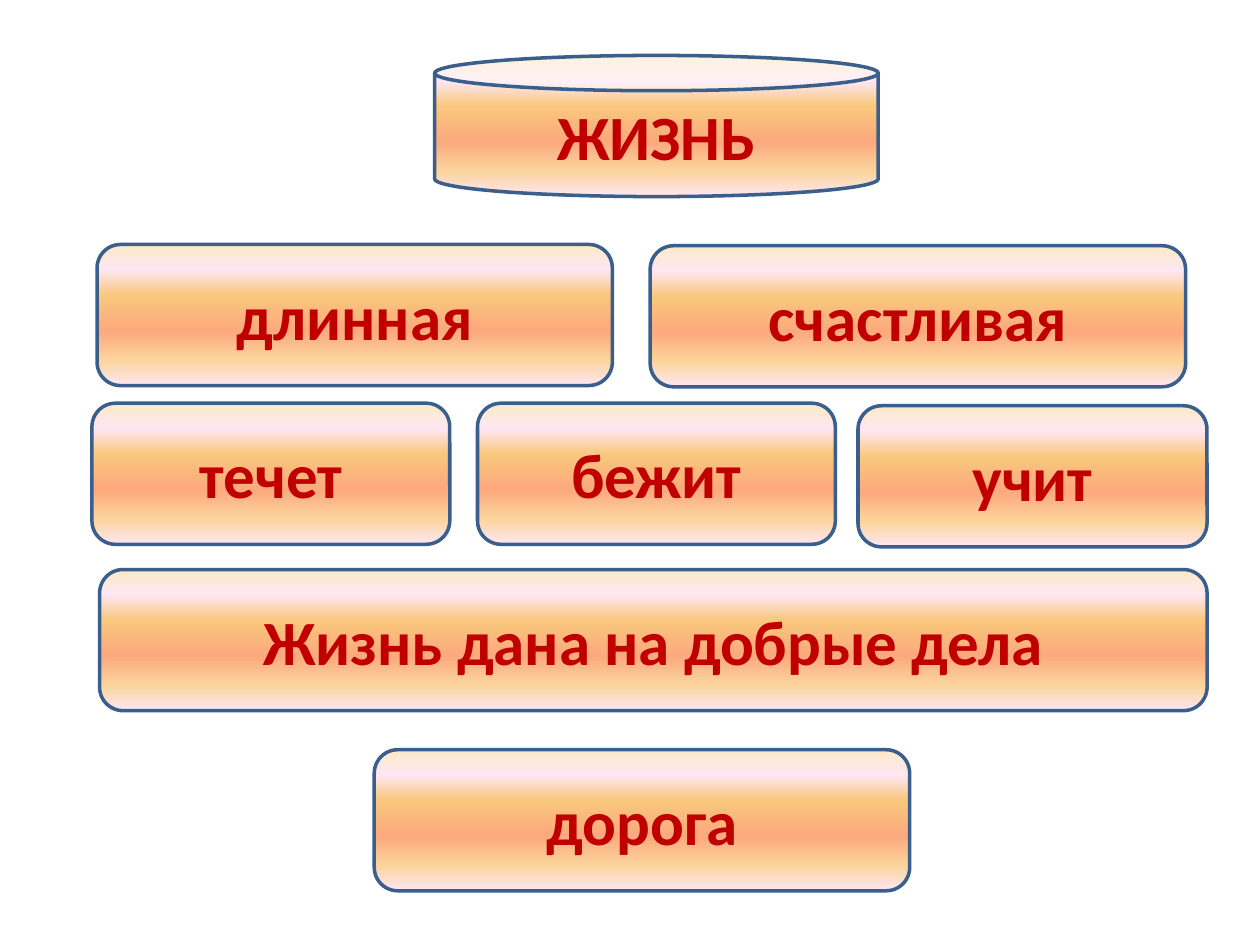
from dataclasses import dataclass

from lxml.etree import SubElement
from pptx import Presentation
from pptx.dml.color import RGBColor as Rgb
from pptx.enum.shapes import MSO_SHAPE as Shape
from pptx.enum.text import MSO_ANCHOR as Anchor, PP_ALIGN as Align
from pptx.oxml.ns import qn
from pptx.util import Inches, Pt

COLUMNS, ROWS = 100, 75
BLOCK_ROWS = 11.2


@dataclass(frozen=True)
class Theme:
    """Colours and type of the slide."""
    font: str = "Calibri"
    size: int = 36
    text: str = "C00000"
    outline: str = "3A5F8C"
    outline_width: int = 2
    glow: tuple = ((0, "FBEAC7"), (18, "FEE7F2"), (36, "FAC77D"),
                   (61, "FBA97D"), (82, "FBD49C"), (100, "FEE7F2"))


THEME = Theme()


def paint_glow(block):
    """Fill a block with the theme's top-to-bottom gradient."""
    block.fill.gradient()
    block.fill.gradient_angle = 270
    stops = block._element.spPr.find(qn("a:gradFill")).find(qn("a:gsLst"))
    stops.clear()
    for percent, colour in THEME.glow:
        stop = SubElement(stops, qn("a:gs"), pos=str(percent * 1000))
        SubElement(stop, qn("a:srgbClr"), val=colour)


def add_block(slide, box, word, outline_shape=Shape.ROUNDED_RECTANGLE):
    """Place one word block in a box given in grid units."""
    block = slide.shapes.add_shape(outline_shape, *box)
    block.shadow.inherit = False
    paint_glow(block)
    block.line.color.rgb = Rgb.from_string(THEME.outline)
    block.line.width = Pt(THEME.outline_width)
    frame = block.text_frame
    frame.word_wrap = True
    frame.vertical_anchor = Anchor.MIDDLE
    paragraph = frame.paragraphs[0]
    paragraph.alignment = Align.CENTER
    run = paragraph.add_run()
    run.text = word
    run.font.name = THEME.font
    run.font.size = Pt(THEME.size)
    run.font.bold = True
    run.font.color.rgb = Rgb.from_string(THEME.text)


def add_cinquain(slide, width, height):
    """Place the five-line poem, line by line, on the slide's grid."""
    column, row = width / COLUMNS, height / ROWS
    can = Shape.CAN
    rounded = Shape.ROUNDED_RECTANGLE
    blocks = (
        (7.7, 19.4, 40.9, "длинная", rounded),
        (51.6, 19.5, 42.5, "счастливая", rounded),
        (7.3, 32, 28.4, "течет", rounded),
        (37.9, 32, 28.4, "бежит", rounded),
        (68.1, 32.2, 27.7, "учит", rounded),
        (7.9, 45.2, 87.9, "Жизнь дана на добрые дела", rounded),
        (29.7, 59.5, 42.5, "дорога", rounded),
        (34.5, 4.4, 35.2, "ЖИЗНЬ", can),
    )
    for left, top, span, word, outline_shape in blocks:
        box = (round(left * column), round(top * row),
               round(span * column), round(BLOCK_ROWS * row))
        add_block(slide, box, word, outline_shape)


def main():
    """Build and save the slide."""
    deck = Presentation()
    deck.slide_width, deck.slide_height = Inches(10), Inches(7.5)
    slide = deck.slides.add_slide(deck.slide_layouts.get_by_name("Blank"))
    add_cinquain(slide, deck.slide_width, deck.slide_height)
    deck.save("out.pptx")


if __name__ == "__main__":
    main()
